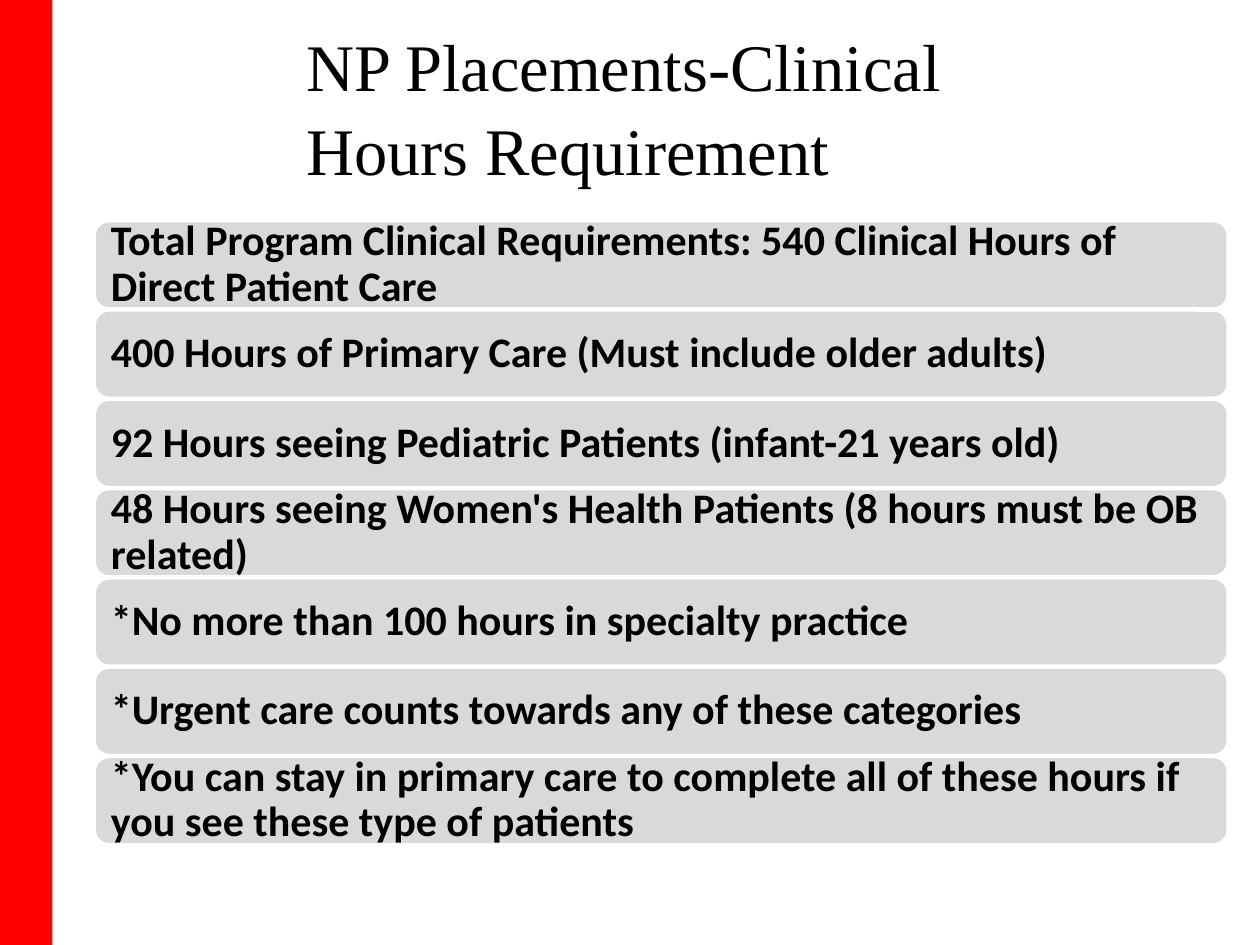
from pptx import Presentation
from pptx.dml.color import RGBColor
from pptx.enum.shapes import MSO_SHAPE
from pptx.enum.text import MSO_ANCHOR, MSO_AUTO_SIZE, PP_ALIGN
from pptx.util import Cm, Pt

RED = RGBColor(0xFF, 0x00, 0x00)
GREY = RGBColor(0xD9, 0xD9, 0xD9)
WHITE = RGBColor(0xFF, 0xFF, 0xFF)
BLACK = RGBColor(0x00, 0x00, 0x00)

TITLE = "NP Placements-Clinical Hours Requirement"
REQUIREMENTS = [
    "Total Program Clinical Requirements: 540 Clinical Hours of Direct Patient Care",
    "400 Hours of Primary Care (Must include older adults)",
    "92 Hours seeing Pediatric Patients (infant-21 years old)",
    "48 Hours seeing Women's Health Patients (8 hours must be OB related)",
    "*No more than 100 hours in specialty practice",
    "*Urgent care counts towards any of these categories",
    "*You can stay in primary care to complete all of these hours if you see these type of patients",
]
FIRST_BAR_TOP = 4.45
BAR_PITCH = 1.8


def set_text(shape, text, font_name, size, line_spacing, inset, bold=False):
    """Write one left-aligned, vertically centred paragraph into a shape."""
    frame = shape.text_frame
    frame.text = text
    frame.word_wrap = True
    frame.auto_size = MSO_AUTO_SIZE.NONE
    frame.vertical_anchor = MSO_ANCHOR.MIDDLE
    frame.margin_left = frame.margin_right = inset
    frame.margin_top = frame.margin_bottom = inset
    paragraph = frame.paragraphs[0]
    paragraph.alignment = PP_ALIGN.LEFT
    paragraph.line_spacing = line_spacing
    paragraph.font.name = font_name
    paragraph.font.size = Pt(size)
    paragraph.font.bold = bold
    paragraph.font.color.rgb = BLACK


def add_side_band(slide, height):
    """Add the red band along the left edge."""
    band = slide.shapes.add_shape(MSO_SHAPE.RECTANGLE, 0, 0, Cm(1.06), height)
    band.shadow.inherit = False
    band.fill.solid()
    band.fill.fore_color.rgb = RED
    band.line.fill.background()


def format_title(slide):
    """Place and fill the title placeholder."""
    title = slide.shapes.title
    title.left, title.top = Cm(6.17), Cm(0.46)
    title.width, title.height = Cm(15.37), Cm(3.3)
    set_text(title, TITLE, "Times New Roman", 38, 1.05, 0)


def add_requirement_bar(slide, top, text):
    """Add one rounded grey bar holding a requirement."""
    bar = slide.shapes.add_shape(
        MSO_SHAPE.ROUNDED_RECTANGLE, Cm(1.9), top, Cm(22.86), Cm(1.78)
    )
    bar.shadow.inherit = False
    bar.fill.solid()
    bar.fill.fore_color.rgb = GREY
    bar.line.color.rgb = WHITE
    bar.line.width = Pt(2)
    set_text(bar, text, "Calibri", 24, 0.9, Cm(0.25), bold=True)


def main():
    """Build and save the slide."""
    presentation = Presentation()
    presentation.slide_width, presentation.slide_height = Cm(25.4), Cm(19.05)
    slide = presentation.slides.add_slide(presentation.slide_layouts[5])
    add_side_band(slide, presentation.slide_height)
    format_title(slide)
    for index, requirement in enumerate(REQUIREMENTS):
        add_requirement_bar(slide, Cm(FIRST_BAR_TOP + index * BAR_PITCH), requirement)
    presentation.save("out.pptx")


if __name__ == "__main__":
    main()
